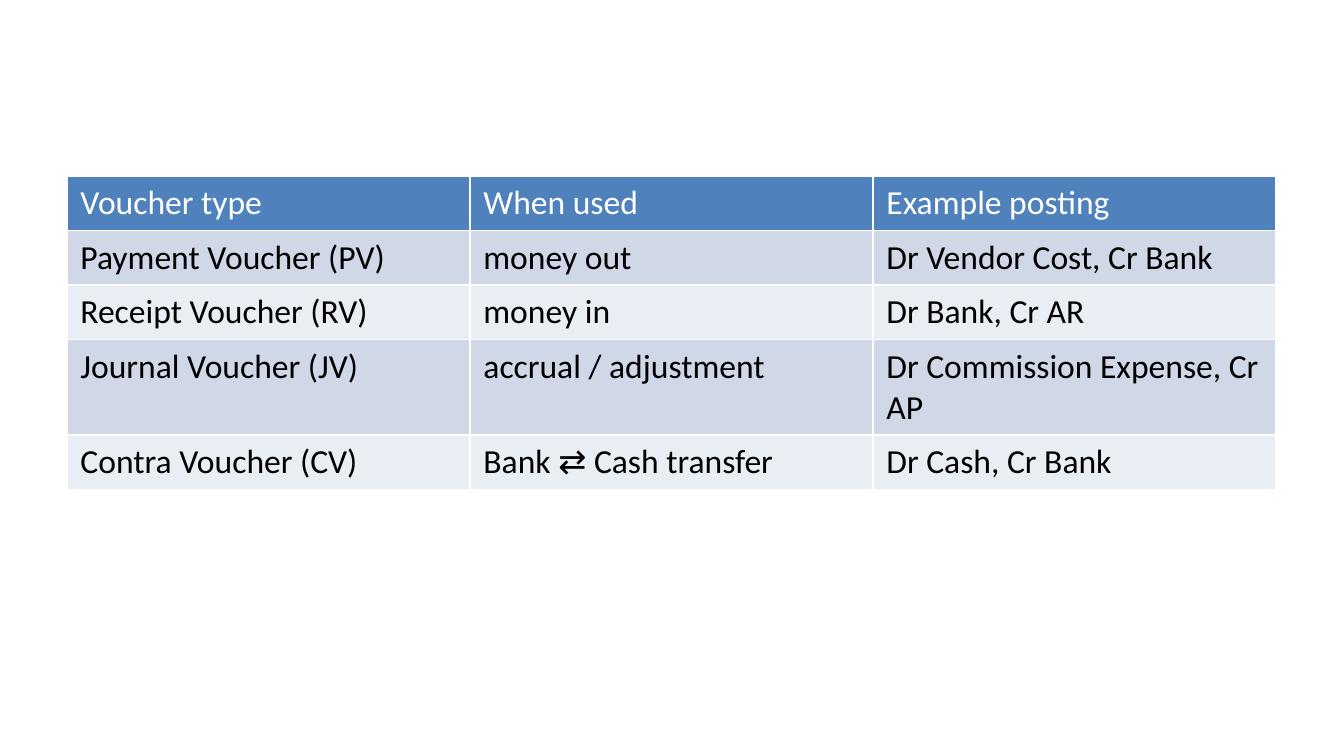
from pptx import Presentation
from pptx.dml.color import RGBColor as RGB
from pptx.util import Pt

# Content
HEAD = ("Voucher type", "When used", "Example posting")
ROWS = [
    ("Payment Voucher (PV)", "money out", "Dr Vendor Cost, Cr Bank"),
    ("Receipt Voucher (RV)", "money in", "Dr Bank, Cr AR"),
    ("Journal Voucher (JV)", "accrual / adjustment",
     "Dr Commission Expense, Cr AP"),
    ("Contra Voucher (CV)", "Bank ⇄ Cash transfer", "Dr Cash, Cr Bank"),
]

# Colours
WHITE = RGB(0xFF, 0xFF, 0xFF)
BLACK = RGB(0, 0, 0)
BLUE = RGB(0x4F, 0x81, 0xBD)
BANDS = (RGB(0xD0, 0xD8, 0xE8), RGB(0xE9, 0xED, 0xF4))

# Layout in px
WIDE, HIGH = 1344, 756
LEFT, TOP, COL, TALL = 67, 176, 403, 499


def px(n):
    return round(n * 914400 / 134.4)


def write(cell, text, size=18, color=BLACK, fill=WHITE):
    cell.fill.solid()
    cell.fill.fore_color.rgb = fill
    run = cell.text_frame.paragraphs[0].add_run()
    run.text = text
    font = run.font
    font.name, font.size, font.bold = "Calibri", Pt(size), False
    font.color.rgb = color


def main():
    prs = Presentation()
    prs.slide_width, prs.slide_height = px(WIDE), px(HIGH)
    slide = prs.slides.add_slide(prs.slide_layouts[6])

    # Voucher table; the style supplies the white borders
    lines = [HEAD] + ROWS
    frame = slide.shapes.add_table(len(lines), len(HEAD), px(LEFT), px(TOP),
                                   px(COL * len(HEAD)), px(TALL))
    table = frame.table
    for r, line in enumerate(lines):
        table.rows[r].height = 0  # rows grow to fit their text
        look = (dict(color=WHITE, fill=BLUE) if r == 0
                else dict(fill=BANDS[(r - 1) % 2]))
        for c, text in enumerate(line):
            write(table.cell(r, c), text, **look)
    frame.height = px(TALL)

    prs.save("out.pptx")


if __name__ == "__main__":
    main()
